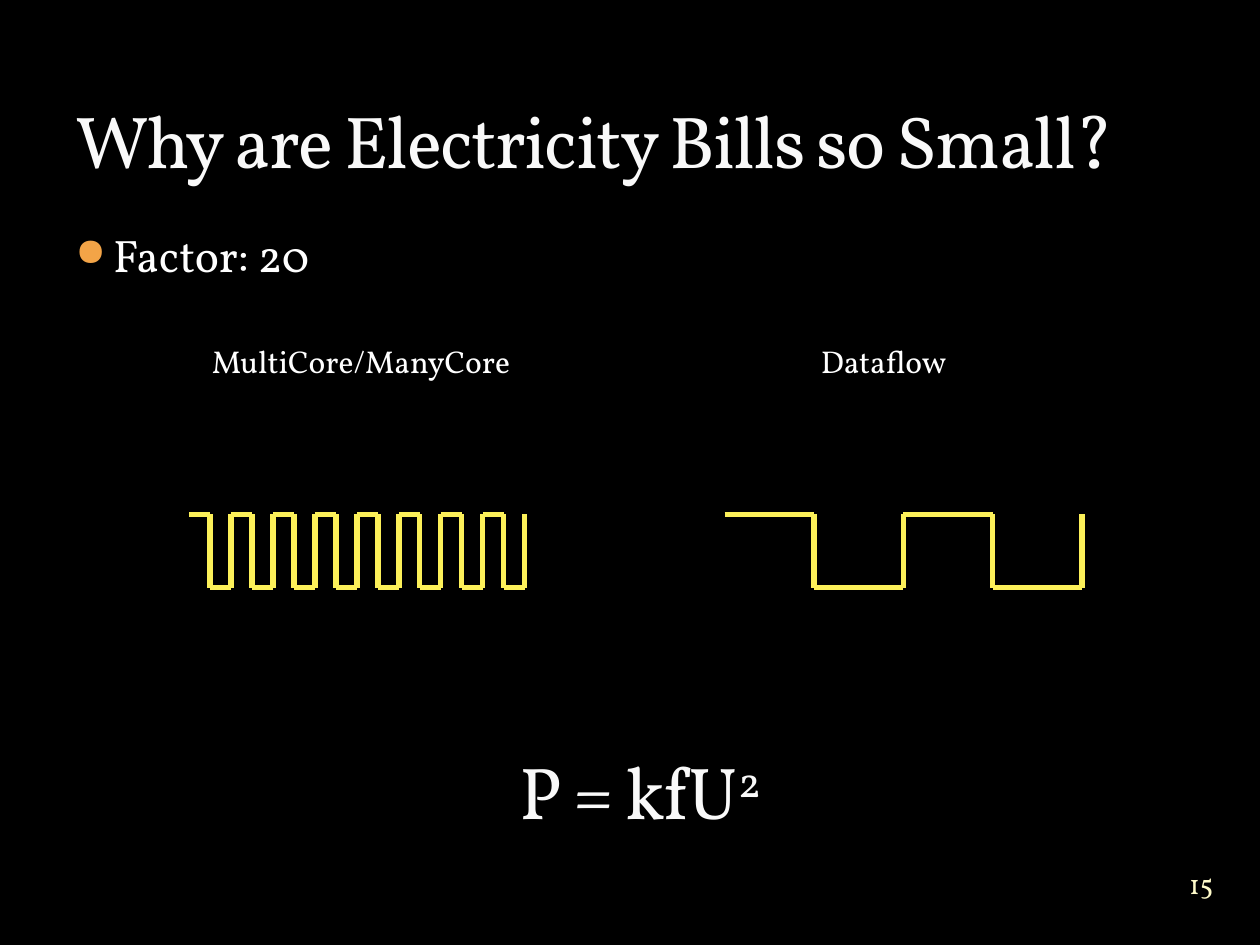
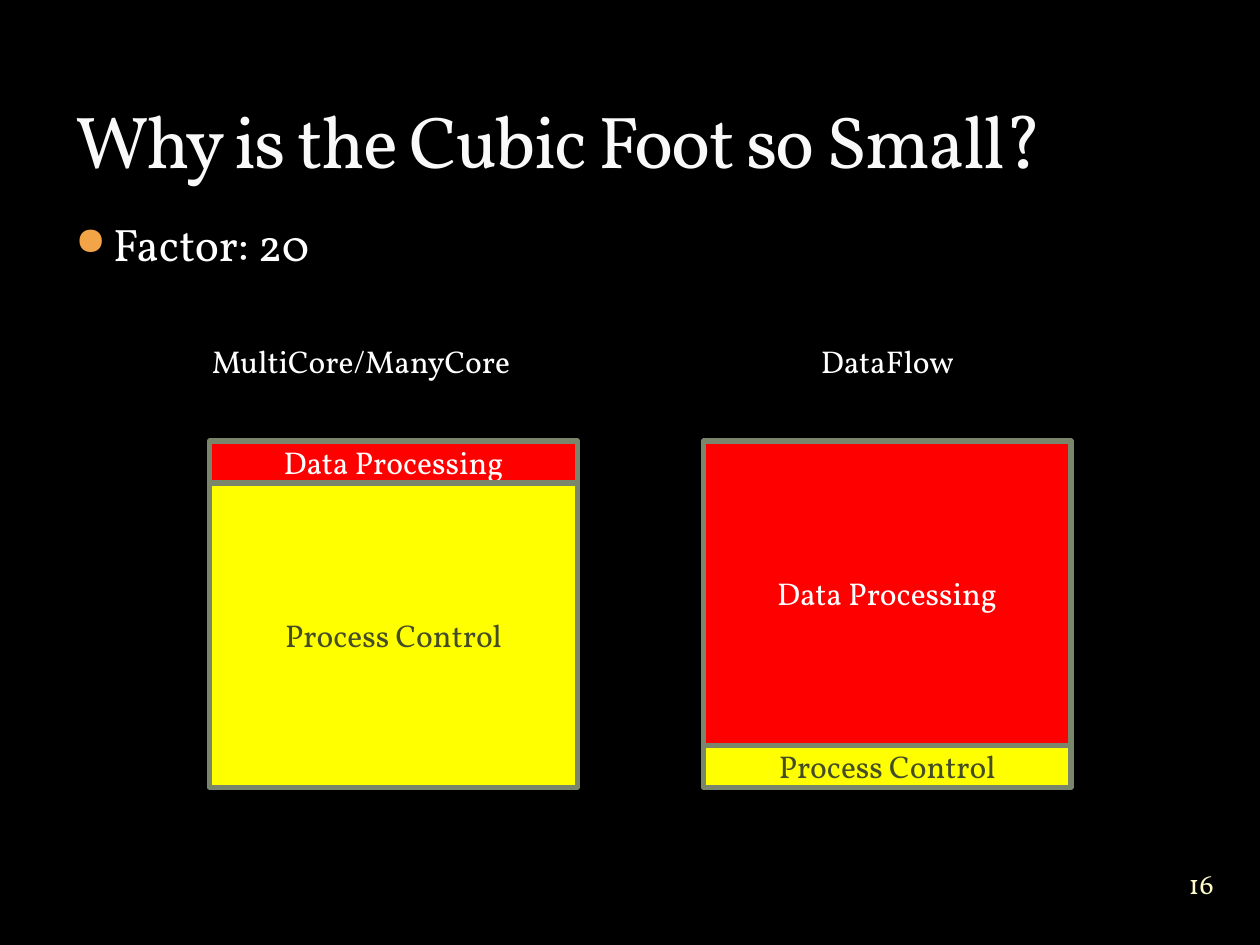
from lxml import etree
from pptx import Presentation
from pptx import util as u
from pptx.dml.color import RGBColor
from pptx.enum import shapes, text
from pptx.oxml import ns

BLACK = RGBColor(0x00, 0x00, 0x00)
WHITE = RGBColor(0xFF, 0xFF, 0xFF)
TITLE = RGBColor(0xF9, 0xF9, 0xF9)
OUTLINE = RGBColor(0x3C, 0x44, 0x22)
BULLET = RGBColor(0xF3, 0xA4, 0x47)
NUMBER = RGBColor(0xFE, 0xFA, 0xC9)
SIGNAL = RGBColor(0xFC, 0xF0, 0x59)
RED = RGBColor(0xFF, 0x00, 0x00)
YELLOW = RGBColor(0xFF, 0xFF, 0x00)
OLIVE = RGBColor(0x44, 0x4D, 0x26)
BORDER = RGBColor(0x7A, 0x86, 0x6C)

BOTTOM = {"vertical_anchor": text.MSO_ANCHOR.BOTTOM}
MIDDLE = {"vertical_anchor": text.MSO_ANCHOR.MIDDLE}
GROW = {"auto_size": text.MSO_AUTO_SIZE.SHAPE_TO_FIT_TEXT}
NO_INSET = dict.fromkeys(("margin_left", "margin_top", "margin_right", "margin_bottom"), 0)
LEFT = {"alignment": text.PP_ALIGN.LEFT}
CENTER = {"alignment": text.PP_ALIGN.CENTER}


def child(parent, tag, **attrs):
    return etree.SubElement(parent, ns.qn(tag), attrs)


class Deck:
    """Hold the shared style and the current slide, and draw each kind of element."""

    font = "Vollkorn"
    stroke = u.Pt(3)

    def __init__(self):
        self.prs = Presentation()
        self.prs.slide_width, self.prs.slide_height = u.Cm(25.4), u.Cm(19.05)
        self.s = None

    def slide(self, title, number, factor_top, right_label):
        self.s = self.prs.slides.add_slide(self.prs.slide_layouts[6])
        fill = self.s.background.fill
        fill.solid()
        fill.fore_color.rgb = BLACK
        self.headline(title, (1.27, 0.42, 22.86, 3.39), LEFT)
        self.bullet("Factor: 20", (1.27, factor_top, 22.86, 12.7))
        self.textbox("MultiCore/ManyCore", (4.02, 6.77, 6.77, 1.03), 18, WHITE, GROW)
        self.textbox(right_label, (16.3, 6.77, 3.81, 1.03), 18, WHITE, GROW)
        self.textbox(number, (23.37, 17.17, 1.69, 1.27), 16, NUMBER,
                     {**MIDDLE, **NO_INSET}, CENTER)

    def label(self, sp, words, size, color, frame, para):
        tf = sp.text_frame
        p = tf.paragraphs[0]
        for target, values in ((tf, {"word_wrap": True, **frame}), (p, para)):
            for name, value in values.items():
                setattr(target, name, value)
        self.add_words(p, words, size, color)
        return p

    def add_words(self, p, words, size, color):
        r = p.add_run()
        r.text = words
        for name, value in {"name": self.font, "size": u.Pt(size)}.items():
            setattr(r.font, name, value)
        r.font.color.rgb = color
        return r

    def textbox(self, words, box, size, color, frame, para=LEFT):
        sp = self.s.shapes.add_textbox(*map(u.Cm, box))
        return self.label(sp, words, size, color, frame, para)

    def headline(self, words, box, para, superscript=""):
        p = self.textbox(words, box, 42, TITLE, BOTTOM, para)
        if superscript:
            r = self.add_words(p, superscript, 42, TITLE)
            r._r.get_or_add_rPr().set("baseline", "30000")
        for r in p.runs:
            props = r._r.get_or_add_rPr()
            props.set("spc", "-100")
            ln = etree.Element(ns.qn("a:ln"), w="3175")
            clr = child(child(ln, "a:solidFill"), "a:srgbClr", val=str(OUTLINE))
            child(clr, "a:alpha", val="25000")
            props.insert(0, ln)

    def bullet(self, words, box):
        p = self.textbox(words, box, 26, WHITE, {}, {"space_before": u.Pt(6)})
        props = p._p.get_or_add_pPr()
        indent = u.Cm(0.76)
        props.set("marL", str(indent))
        props.set("indent", str(-indent))
        child(child(props, "a:buClr"), "a:srgbClr", val=str(BULLET))
        child(props, "a:buSzPct", val="85000")
        child(props, "a:buChar", char="●")

    def block(self, words, box, fill, color):
        sp = self.s.shapes.add_shape(shapes.MSO_SHAPE.RECTANGLE, *map(u.Cm, box))
        sp.shadow.inherit = False
        sp.fill.solid()
        sp.fill.fore_color.rgb = fill
        sp.line.color.rgb = BORDER
        sp.line.width = self.stroke
        self.label(sp, words, 18, color, MIDDLE, CENTER)

    def line(self, group, start, end):
        cx = group.shapes.add_connector(shapes.MSO_CONNECTOR.STRAIGHT, *map(u.Cm, start + end))
        cx.line.color.rgb = SIGNAL
        cx.line.width = self.stroke
        child(cx._element.spPr, "a:effectLst")

    def wave(self, left, width, steps, high=10.37, low=11.85):
        group = self.s.shapes.add_group_shape()
        step = width / steps
        for i in range(steps):
            x, end = left + i * step, left + (i + 1) * step
            y, other = (low, high) if i % 2 else (high, low)
            self.line(group, (x, y), (end, y))
            self.line(group, (end, y), (end, other))

    def stack(self, left, data_height, top=8.89, width=7.41, height=6.98):
        self.block("Data Processing", (left, top, width, data_height), RED, WHITE)
        self.block("Process Control",
                   (left, top + data_height, width, height - data_height), YELLOW, OLIVE)


def main():
    deck = Deck()

    deck.slide("Why are Electricity Bills so Small?", "15", 4.45, "Dataflow")
    deck.wave(left=3.81, width=6.77, steps=16)
    deck.wave(left=14.61, width=7.2, steps=4)
    deck.headline("P = kfU", (1.48, 13.55, 22.86, 3.39), CENTER, superscript="2")

    deck.slide("Why is the Cubic Foot so Small?", "16", 4.23, "DataFlow")
    deck.stack(left=4.23, data_height=0.85)
    deck.stack(left=14.18, data_height=6.14)

    deck.prs.save("out.pptx")


if __name__ == "__main__":
    main()
